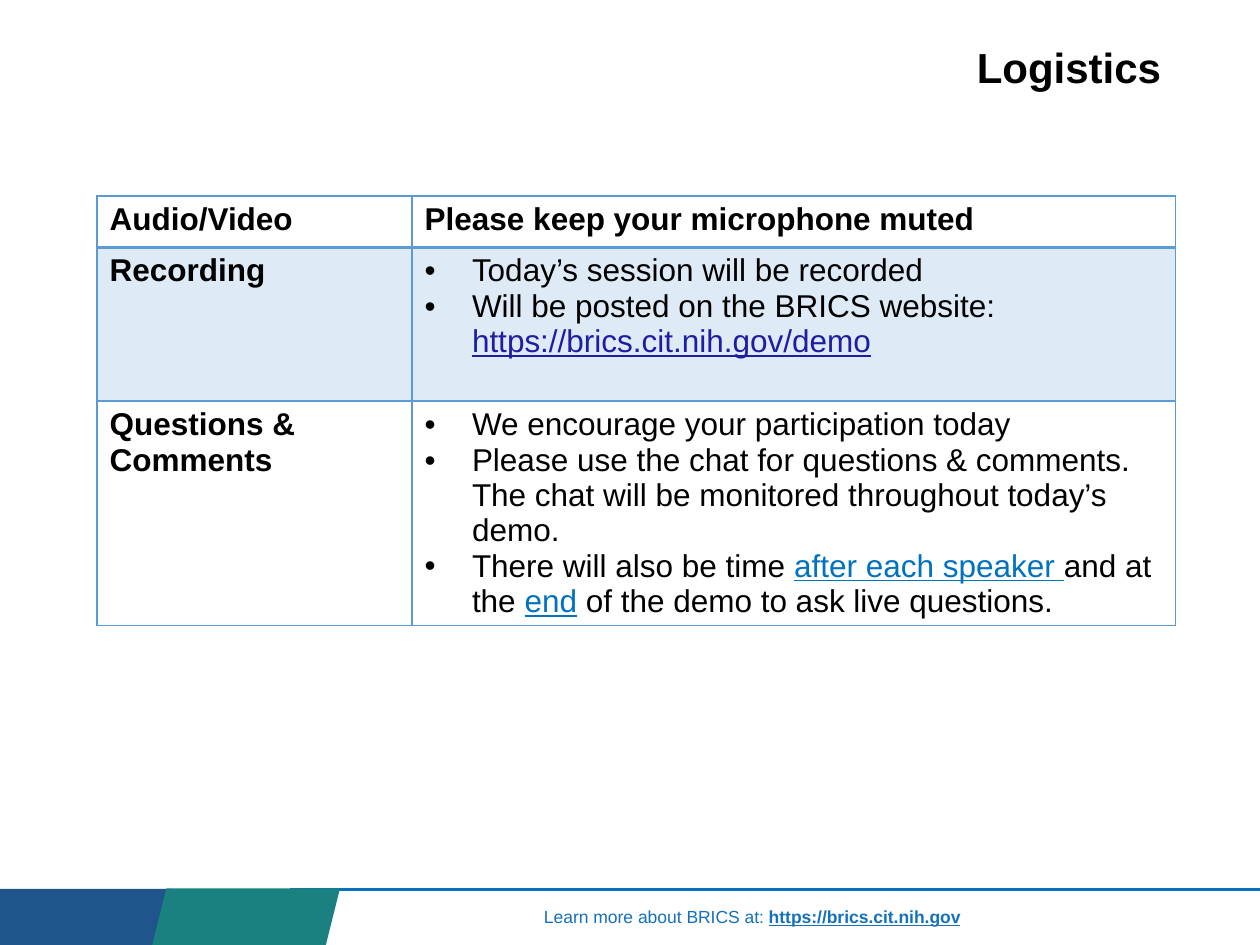
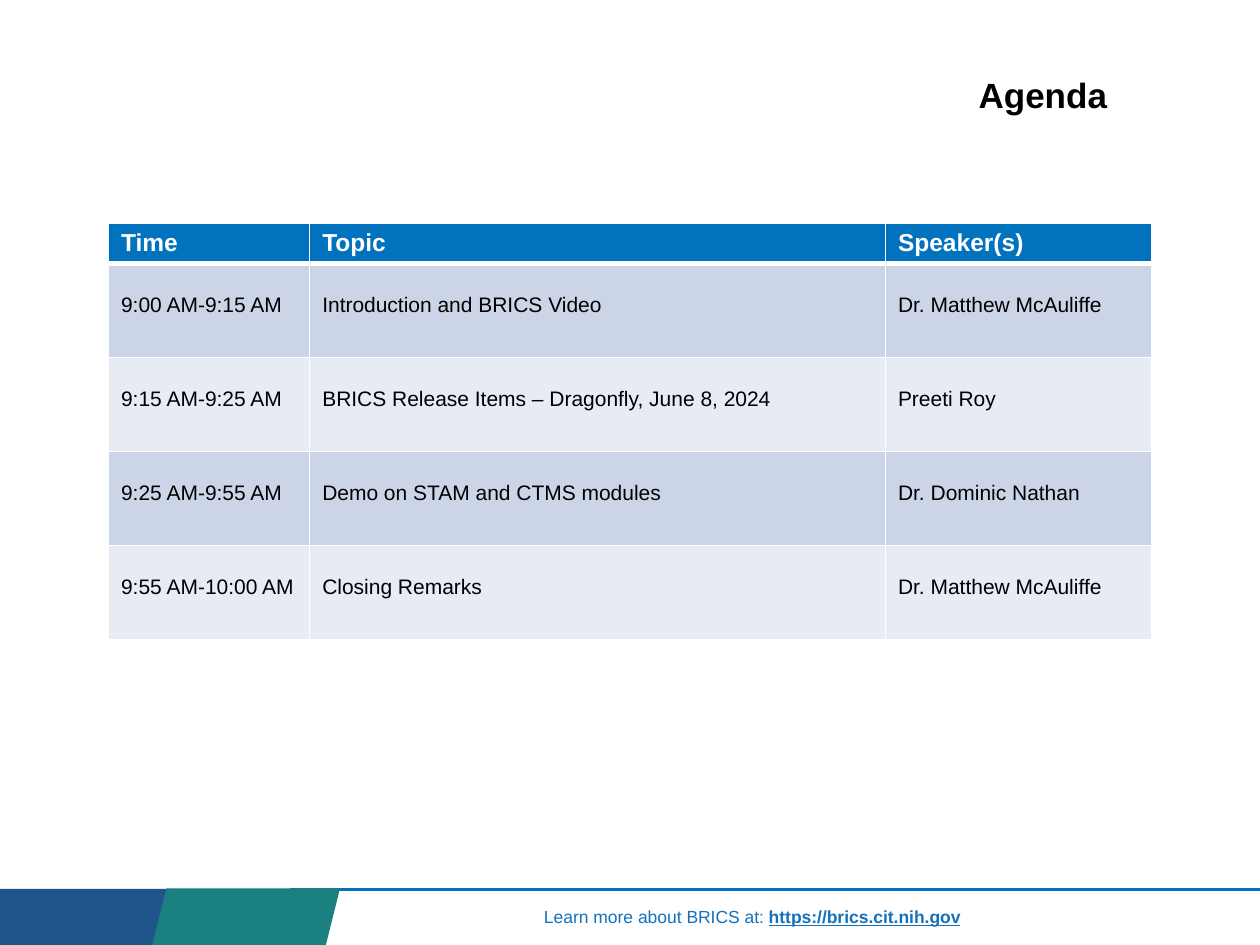
from lxml import etree
from pptx import Presentation
from pptx.dml.color import RGBColor
from pptx.enum.shapes import MSO_CONNECTOR, MSO_SHAPE
from pptx.enum.text import MSO_ANCHOR, MSO_AUTO_SIZE, PP_ALIGN
from pptx.oxml.ns import qn
from pptx.util import Pt

STRAIGHT = MSO_CONNECTOR.STRAIGHT
RECTANGLE = MSO_SHAPE.RECTANGLE
PARALLELOGRAM = MSO_SHAPE.PARALLELOGRAM
MIDDLE = MSO_ANCHOR.MIDDLE
NO_AUTOFIT = MSO_AUTO_SIZE.NONE
LEFT = PP_ALIGN.LEFT

FONT = "Arial"
BLACK = RGBColor(0x00, 0x00, 0x00)
WHITE = RGBColor(0xFF, 0xFF, 0xFF)
BLUE = RGBColor(0x00, 0x72, 0xBE)
NAVY = RGBColor(0x1F, 0x55, 0x8A)
TEAL = RGBColor(0x1A, 0x80, 0x80)
FOOTER_BLUE = RGBColor(0x14, 0x71, 0xBA)
LINK_BLUE = RGBColor(0x1D, 0x1E, 0xA3)
GRID_BLUE = RGBColor(0x5B, 0x9B, 0xD5)
PALE_BLUE = RGBColor(0xDE, 0xEB, 0xF7)
BAND_DARK = RGBColor(0xCC, 0xD5, 0xE8)
BAND_LIGHT = RGBColor(0xE7, 0xEB, 0xF4)


def add_text(paragraph, text, size=18, color=BLACK, bold=False, underline=False):
    run = paragraph.add_run()
    run.text = text
    run.font.name = FONT
    run.font.size = Pt(size)
    run.font.color.rgb = color
    run.font.bold = bold
    run.font.underline = underline


def format_table(table, widths, heights, border_color, header_rule):
    table.first_row = False
    table.horz_banding = False
    for column, width in zip(table.columns, widths):
        column.width = Pt(width)
    for row_index, (row, height) in enumerate(zip(table.rows, heights)):
        row.height = Pt(height)
        rules = {"a:lnL": 1, "a:lnR": 1,
                 "a:lnT": header_rule if row_index == 1 else 1,
                 "a:lnB": header_rule if row_index == 0 else 1}
        for cell in row.cells:
            properties = cell._tc.get_or_add_tcPr()
            for side, weight in rules.items():
                line = etree.SubElement(properties, qn(side), w=str(Pt(weight)))
                fill = etree.SubElement(line, qn("a:solidFill"))
                etree.SubElement(fill, qn("a:srgbClr"), val=str(border_color))


presentation = Presentation()
presentation.slide_width = Pt(720)
presentation.slide_height = Pt(540)
layout = presentation.slide_layouts[5]

titles = [("Logistics", 24, (551, 21, 121, 38)), ("Agenda", 20, (552, 38, 96, 35))]
for text, size, box in titles:
    title = presentation.slides.add_slide(layout).shapes.title
    title.left, title.top, title.width, title.height = map(Pt, box)
    title.text_frame.auto_size = NO_AUTOFIT
    title.text_frame.vertical_anchor = MIDDLE
    paragraph = title.text_frame.paragraphs[0]
    paragraph.alignment = LEFT
    paragraph.line_spacing = 0.9
    add_text(paragraph, text, size=size, bold=True)
logistics_slide, agenda_slide = presentation.slides

shapes = logistics_slide.shapes
footer_rule = shapes.add_connector(STRAIGHT, Pt(165.6), Pt(508.3), Pt(720), Pt(508.3))
footer_rule.line.color.rgb = BLUE
footer_rule.line.width = Pt(2)
etree.SubElement(footer_rule.element.spPr, qn("a:effectLst"))
footer_parts = [footer_rule]

for preset, left, top, width, color in [
    (RECTANGLE, 0, 508, 98.6, NAVY),
    (PARALLELOGRAM, 87, 507.6, 107.3, TEAL),
]:
    band = shapes.add_shape(preset, Pt(left), Pt(top), Pt(width), Pt(540 - top))
    band.shadow.inherit = False
    band.fill.solid()
    band.fill.fore_color.rgb = color
    band.line.fill.background()
    footer_parts.append(band)

footer_text = shapes.add_textbox(Pt(303.8), Pt(514), Pt(254.9), Pt(19.4))
footer_text.text_frame.word_wrap = False
paragraph = footer_text.text_frame.paragraphs[0]
add_text(paragraph, "Learn more about BRICS at: ", size=10, color=FOOTER_BLUE)
add_text(paragraph, "https://brics.cit.nih.gov", size=10, color=FOOTER_BLUE,
         bold=True, underline=True)
footer_parts.append(footer_text)
for part in footer_parts:
    layout.shapes.element.append(part.element)

logistics_table = shapes.add_table(3, 2, Pt(55.5), Pt(112), Pt(616.3), Pt(245.2)).table
format_table(logistics_table, (180, 436.3), (29.2, 88, 128), GRID_BLUE, 2)

link = {"color": LINK_BLUE, "underline": True}
stress = {"color": BLUE, "underline": True}
bold = {"bold": True}
logistics_rows = [
    ("Audio/Video", False, [[("Please keep your microphone muted", bold)]]),
    ("Recording", True, [
        [("Today’s session will be recorded", {})],
        [("Will be posted on the BRICS website: ", {}),
         ("https://brics.cit.nih.gov/demo", link)],
    ]),
    ("Questions & Comments", True, [
        [("We encourage your participation today", {})],
        [("Please use the chat for questions & comments. "
          "The chat will be monitored throughout today’s demo.", {})],
        [("There will also be time ", {}), ("after each speaker ", stress),
         ("and at the ", {}), ("end", stress),
         (" of the demo to ask live questions.", {})],
    ]),
]
for row_index, (label, bulleted, items) in enumerate(logistics_rows):
    label_cell, detail_cell = logistics_table.rows[row_index].cells
    for cell in (label_cell, detail_cell):
        if row_index == 1:
            cell.fill.solid()
            cell.fill.fore_color.rgb = PALE_BLUE
        else:
            cell.fill.background()
    add_text(label_cell.text_frame.paragraphs[0], label, bold=True)
    for item_index, runs in enumerate(items):
        frame = detail_cell.text_frame
        paragraph = frame.add_paragraph() if item_index else frame.paragraphs[0]
        if bulleted:
            properties = paragraph._p.get_or_add_pPr()
            properties.set("marL", str(Pt(27)))
            properties.set("indent", str(-Pt(27)))
            etree.SubElement(properties, qn("a:buFont"), typeface=FONT)
            etree.SubElement(properties, qn("a:buChar"), char="•")
        for text, text_format in runs:
            add_text(paragraph, text, **text_format)

agenda_rows = [
    ("Time", "Topic", "Speaker(s)"),
    ("9:00 AM-9:15 AM", "Introduction and BRICS Video", "Dr. Matthew McAuliffe"),
    ("9:15 AM-9:25 AM", "BRICS Release Items – Dragonfly, June 8, 2024", "Preeti Roy"),
    ("9:25 AM-9:55 AM", "Demo on STAM and CTMS modules", "Dr. Dominic Nathan"),
    ("9:55 AM-10:00 AM", "Closing Remarks", "Dr. Matthew McAuliffe"),
]
agenda_table = agenda_slide.shapes.add_table(
    len(agenda_rows), 3, Pt(62), Pt(127.5), Pt(596.4), Pt(238)).table
format_table(agenda_table, (115, 329, 152.4), [23.2] + [53.7] * 4, WHITE, 3)
for row_index, texts in enumerate(agenda_rows):
    for cell, text in zip(agenda_table.rows[row_index].cells, texts):
        paragraph = cell.text_frame.paragraphs[0]
        cell.fill.solid()
        if row_index == 0:
            cell.fill.fore_color.rgb = BLUE
            add_text(paragraph, text, size=14, color=WHITE, bold=True)
        else:
            cell.fill.fore_color.rgb = BAND_DARK if row_index % 2 else BAND_LIGHT
            cell.margin_top = Pt(17)
            add_text(paragraph, text, size=12)

presentation.save("out.pptx")
